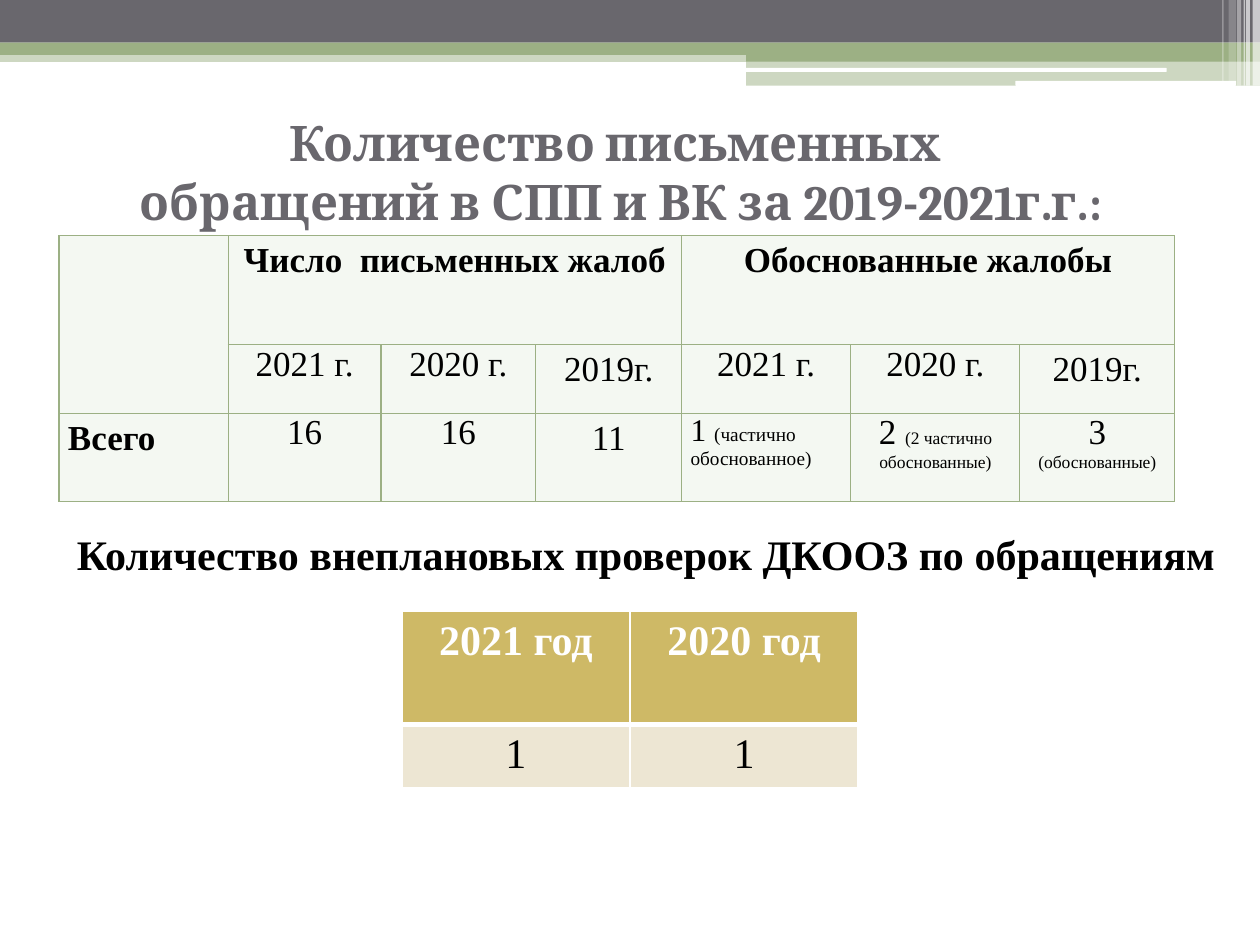
from dataclasses import dataclass

from lxml import etree
from pptx import Presentation
from pptx.dml.color import RGBColor
from pptx.enum.shapes import MSO_SHAPE
from pptx.enum.text import MSO_ANCHOR, PP_ALIGN
from pptx.oxml.ns import qn
from pptx.util import Cm, Pt

RECTANGLE = MSO_SHAPE.RECTANGLE
ROUNDED = MSO_SHAPE.ROUNDED_RECTANGLE
LEFT, CENTER, JUSTIFY = PP_ALIGN.LEFT, PP_ALIGN.CENTER, PP_ALIGN.JUSTIFY
TOP, MIDDLE = MSO_ANCHOR.TOP, MSO_ANCHOR.MIDDLE

SERIF, TITLE_FONT = "Times New Roman", "Cambria"
GRAY, GREEN, WHITE, BLACK = "69676D", "9CB084", "FFFFFF", "000000"
PALE_GREEN, GOLD, PALE_GOLD = "F4F8F2", "CEB966", "EDE6D3"
SLIDE_WIDTH, SLIDE_HEIGHT = 25.4, 19.05
TAB_LEFT = 15.04
TAB_WIDTH = SLIDE_WIDTH - TAB_LEFT


@dataclass
class Band:
    left: float
    top: float
    width: float
    height: float
    color: str
    opacity: int = 100
    kind: int = RECTANGLE


@dataclass
class Entry:
    text: str
    size: float = 20
    bold: bool = False
    align: int = CENTER
    spacing: float = 1.0
    note: str = ""
    note_size: float = 10
    color: str = BLACK
    font: str = SERIF


@dataclass
class Border:
    color: str
    width: float


BANDS = [
    Band(0, 1.02, SLIDE_WIDTH, 0.23, GREEN, 50),
    Band(0, 0, SLIDE_WIDTH, 0.86, GRAY),
    Band(0, 0.86, SLIDE_WIDTH, 0.25, GREEN),
    Band(TAB_LEFT, 0.99, TAB_WIDTH, 0.25, GREEN),
    Band(TAB_LEFT, 1.22, TAB_WIDTH, 0.51, GREEN, 50),
    Band(15.01, 1.37, 8.51, 0.08, WHITE, kind=ROUNDED),
    Band(20.47, 1.63, 4.45, 0.1, WHITE, kind=ROUNDED),
    Band(25.25, 0, 0.15, 1.73, WHITE, 65),
    Band(25.12, 0, 0.08, 1.73, WHITE, 65),
    Band(25.07, 0, 0.03, 1.73, WHITE, 60),
    Band(24.94, 0, 0.08, 1.73, WHITE, 40),
    Band(24.77, 0, 0.15, 1.63, WHITE, 20),
    Band(24.64, 0, 0.03, 1.63, WHITE, 30),
]

COMPLAINTS = {
    (0, 1): Entry("Число  письменных жалоб", bold=True, spacing=1.15),
    (0, 4): Entry("Обоснованные жалобы", bold=True, spacing=1.15),
    (2, 0): Entry("Всего", bold=True, align=JUSTIFY, spacing=1.15),
    (2, 1): Entry("16"),
    (2, 2): Entry("16"),
    (2, 3): Entry("11", spacing=1.15),
    (2, 4): Entry("1 ", 18, align=LEFT, note="(частично обоснованное)", note_size=11),
    (2, 5): Entry("2 ", note="(2 частично обоснованные)"),
    (2, 6): Entry("3 ", note="(обоснованные)"),
}
for first_column in (1, 4):
    COMPLAINTS[1, first_column] = Entry("2021 г.")
    COMPLAINTS[1, first_column + 1] = Entry("2020 г.")
    COMPLAINTS[1, first_column + 2] = Entry("2019г.", spacing=1.15)

INSPECTIONS = {}
for column_index, year in enumerate(("2021 год", "2020 год")):
    INSPECTIONS[0, column_index] = Entry(year, 24, True, color=WHITE)
    INSPECTIONS[1, column_index] = Entry("1", 24)


def paint(target, color: str) -> None:
    target.solid()
    target.fore_color.rgb = RGBColor.from_string(color)


def draw_band(slide, band: Band) -> None:
    shape = slide.shapes.add_shape(
        band.kind, Cm(band.left), Cm(band.top), Cm(band.width), Cm(band.height))
    shape.shadow.inherit = False
    shape.line.fill.background()
    paint(shape.fill, band.color)
    if band.opacity < 100:
        color = shape.fill._xPr.find(qn("a:solidFill"))[0]
        etree.SubElement(color, qn("a:alpha"), val=str(band.opacity * 1000))


def write(text_frame, entry: Entry) -> None:
    text_frame.text = entry.text
    paragraph = text_frame.paragraphs[0]
    paragraph.alignment = entry.align
    paragraph.line_spacing = entry.spacing
    if entry.note:
        paragraph.add_run().text = entry.note
    for run in paragraph.runs:
        run.font.name = entry.font
        run.font.size = Pt(entry.size)
        run.font.bold = entry.bold
        paint(run.font.fill, entry.color)
    if entry.note:
        paragraph.runs[-1].font.size = Pt(entry.note_size)


def draw_text(slide, left: float, top: float, width: float, height: float,
              entry: Entry, anchor: int = TOP, bottom: float = 0.13) -> None:
    box = slide.shapes.add_textbox(Cm(left), Cm(top), Cm(width), Cm(height))
    box.text_frame.word_wrap = True
    box.text_frame.vertical_anchor = anchor
    box.text_frame.margin_bottom = Cm(bottom)
    write(box.text_frame, entry)


def set_borders(cell, borders: dict[str, Border]) -> None:
    properties = cell._tc.get_or_add_tcPr()
    for index, side in enumerate("LRTB"):
        border = borders[side]
        line = etree.Element(qn(f"a:ln{side}"), w=str(Pt(border.width)))
        fill = etree.SubElement(line, qn("a:solidFill"))
        etree.SubElement(fill, qn("a:srgbClr"), val=border.color)
        properties.insert(index, line)


def draw_table(slide, left: float, top: float, widths: list[float], heights: list[float],
               entries: dict[tuple[int, int], Entry], fills: list[str],
               borders: list[dict[str, Border]], margins: tuple[float, float]):
    table = slide.shapes.add_table(
        len(heights), len(widths), Cm(left), Cm(top),
        Cm(sum(widths)), Cm(sum(heights))).table
    for column, width in zip(table.columns, widths):
        column.width = Cm(width)
    for row_index, height in enumerate(heights):
        table.rows[row_index].height = Cm(height)
        for column_index in range(len(widths)):
            cell = table.cell(row_index, column_index)
            cell.margin_left = cell.margin_right = Cm(margins[0])
            cell.margin_top = cell.margin_bottom = Cm(margins[1])
            paint(cell.fill, fills[row_index])
            set_borders(cell, borders[row_index])
            if (row_index, column_index) in entries:
                write(cell.text_frame, entries[row_index, column_index])
    return table


def main() -> None:
    presentation = Presentation()
    presentation.slide_width = Cm(SLIDE_WIDTH)
    presentation.slide_height = Cm(SLIDE_HEIGHT)
    slide = presentation.slides.add_slide(presentation.slide_layouts[6])
    for band in BANDS:
        draw_band(slide, band)

    title = Entry("Количество письменных \vобращений в СПП и ВК за 2019-2021г.г.:",
                  28, True, color=GRAY, font=TITLE_FONT)
    draw_text(slide, 1.09, 2.51, 22.86, 2.97, title, MIDDLE, 1.2)

    green_borders = dict.fromkeys("LRTB", Border(GREEN, 0.75))
    complaints = draw_table(
        slide, 1.19, 4.75, [3.41, 3.08, 3.12, 2.94, 3.41, 3.41, 3.12], [2.2, 1.39, 1.77],
        COMPLAINTS, [PALE_GREEN] * 3, [green_borders] * 3, (0.18, 0))
    complaints.cell(0, 0).merge(complaints.cell(1, 0))
    for first in (1, 4):
        complaints.cell(0, first).merge(complaints.cell(0, first + 2))

    heading = Entry("Количество внеплановых проверок ДКООЗ по обращениям", 24, True, LEFT)
    draw_text(slide, 1.3, 10.52, 24.1, 1.27, heading)

    white_borders = dict.fromkeys("LRTB", Border(WHITE, 1))
    header_borders = white_borders | {"B": Border(WHITE, 3)}
    body_borders = white_borders | {"T": Border(WHITE, 3)}
    draw_table(slide, 8.1, 12.32, [4.6, 4.6], [2.29, 1.25], INSPECTIONS,
               [GOLD, PALE_GOLD], [header_borders, body_borders], (0.25, 0.13))
    presentation.save("out.pptx")


if __name__ == "__main__":
    main()
